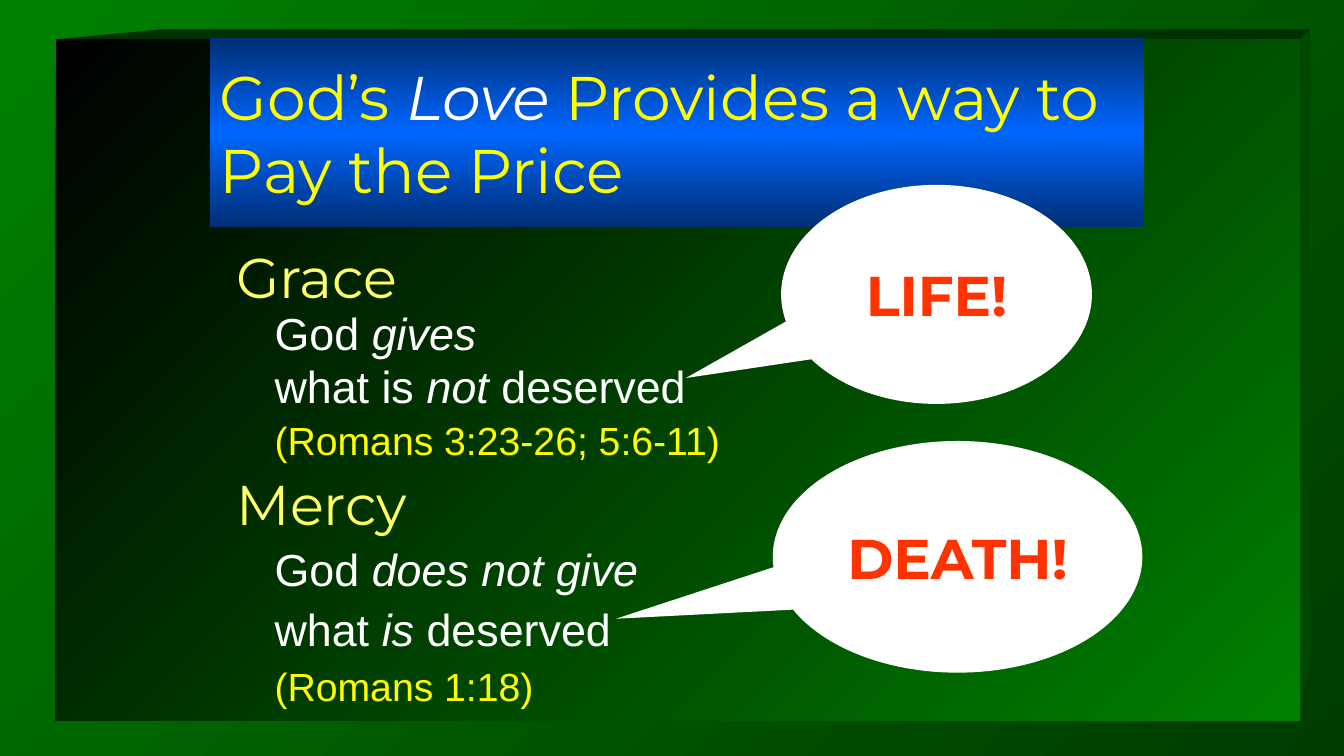
import copy

import pptx
import pptx.dml.color
import pptx.enum.shapes
import pptx.enum.text
import pptx.util

Pt = pptx.util.Pt
SHAPE = pptx.enum.shapes.MSO_SHAPE
ALIGN = pptx.enum.text.PP_ALIGN
ANCHOR = pptx.enum.text.MSO_ANCHOR

YELLOW, WHITE = "FFFF00", "FFFFFF"
HEADING = ("Montserrat", 40, "FFFF66")
LINE = ("Arial", 32, WHITE)
VERSE = ("Arial", 28, YELLOW)
BODY = [
    (HEADING, 0, 0, ["Grace"]),
    (LINE, 27, 1, ["God ", "gives"]),
    (LINE, 27, 3.5, ["what is ", "not", " deserved"]),
    (VERSE, 27, 5.5, ["(Romans 3:23-26; 5:6-11)"]),
    (HEADING, 0, 9.5, ["Mercy"]),
    (LINE, 27, 7.5, ["God ", "does not give"]),
    (LINE, 27, 8.5, ["what ", "is", " deserved"]),
    (VERSE, 27, 8, ["(Romans 1:18)"]),
]


def rgb(value):
    """Turn a hex string into a colour."""
    return pptx.dml.color.RGBColor.from_string(value)


def set_gradient(fill, angle, colors):
    """Fill with evenly spaced colours along a counter-clockwise angle."""
    fill.gradient()
    fill.gradient_angle = angle
    first = fill.gradient_stops[0]._gs
    for _ in colors[2:]:
        first.addnext(copy.deepcopy(first))
    for i, (stop, color) in enumerate(zip(fill.gradient_stops, colors)):
        stop.color.rgb = rgb(color)
        stop.position = i / (len(colors) - 1)


def set_plain(sp, color=None):
    """Remove outline and shadow, and fill with a colour if one is given."""
    sp.shadow.inherit = False
    sp.line.fill.background()
    if color:
        sp.fill.solid()
        sp.fill.fore_color.rgb = rgb(color)


def add_run(p, text, name, size, color, italic=False, bold=False):
    """Append one formatted run to a paragraph."""
    r = p.add_run()
    r.text = text
    r.font.name, r.font.size = name, Pt(size)
    r.font.color.rgb = rgb(color)
    r.font.italic, r.font.bold = italic, bold


def add_panel(slide, x, y, w, h):
    """Draw the dark panel with its raised top and right edges."""
    right, bottom, depth = x + w, y + h, 7
    edges = [
        ("003000", [(x, y), (x + 75, y - depth), (right + depth, y - depth), (right, y)]),
        ("004800", [(right, y), (right + depth, y - depth),
                    (right + depth, bottom - 43), (right, bottom)]),
    ]
    for color, points in edges:
        builder = slide.shapes.build_freeform(*points[0], scale=Pt(1))
        builder.add_line_segments(points[1:])
        set_plain(builder.convert_to_shape(), color)
    sp = slide.shapes.add_shape(SHAPE.RECTANGLE, Pt(x), Pt(y), Pt(w), Pt(h))
    set_plain(sp)
    set_gradient(sp.fill, 315, ["000000", "008000"])


def add_title(slide, x, y, w, h):
    """Draw the blue title band."""
    sp = slide.shapes.add_shape(SHAPE.RECTANGLE, Pt(x), Pt(y), Pt(w), Pt(h))
    set_plain(sp)
    set_gradient(sp.fill, 90, ["002F76", "0066FF", "002F76"])
    tf = sp.text_frame
    tf.word_wrap, tf.vertical_anchor = True, ANCHOR.MIDDLE
    p = tf.paragraphs[0]
    p.alignment = ALIGN.LEFT
    add_run(p, "God’s ", "Montserrat", 44, YELLOW)
    add_run(p, "Love", "Montserrat", 44, WHITE, italic=True)
    add_run(p, " Provides a way to Pay the Price", "Montserrat", 44, YELLOW)


def add_body(slide, x, y, w, h):
    """Write the headings and their lines; every second run is italic."""
    tf = slide.shapes.add_textbox(Pt(x), Pt(y), Pt(w), Pt(h)).text_frame
    tf.word_wrap = True
    for i, (style, indent, before, texts) in enumerate(BODY):
        p = tf.add_paragraph() if i else tf.paragraphs[0]
        p.line_spacing, p.space_before = 0.9, Pt(before)
        p._p.get_or_add_pPr().set("marL", str(Pt(indent)))
        for j, text in enumerate(texts):
            add_run(p, text, *style, italic=j % 2 == 1)


def add_callout(slide, x, y, w, h, tip, text):
    """Draw a white speech bubble whose tail ends at the tip."""
    sp = slide.shapes.add_shape(SHAPE.OVAL_CALLOUT, Pt(x), Pt(y), Pt(w), Pt(h))
    set_plain(sp, WHITE)
    sp.adjustments[0] = (tip[0] - x) / w - 0.5
    sp.adjustments[1] = (tip[1] - y) / h - 0.5
    tf = sp.text_frame
    tf.word_wrap, tf.vertical_anchor = True, ANCHOR.MIDDLE
    p = tf.paragraphs[0]
    p.alignment = ALIGN.CENTER
    add_run(p, text, "Montserrat", 40, "FF3300", bold=True)


def main():
    """Build and save the slide."""
    prs = pptx.Presentation()
    prs.slide_width, prs.slide_height = Pt(960), Pt(540)
    slide = prs.slides.add_slide(prs.slide_layouts[6])
    set_gradient(slide.background.fill, 315, ["008000", "003B00"])
    add_panel(slide, 40, 28, 888.5, 487)
    add_body(slide, 162, 175, 389, 340)
    add_title(slide, 150, 27, 667.5, 135)
    add_callout(slide, 558, 132, 222, 156.5, (490, 270), "LIFE!")
    add_callout(slide, 552, 315, 264, 165.5, (440, 442), "DEATH!")
    prs.save("out.pptx")


if __name__ == "__main__":
    main()
